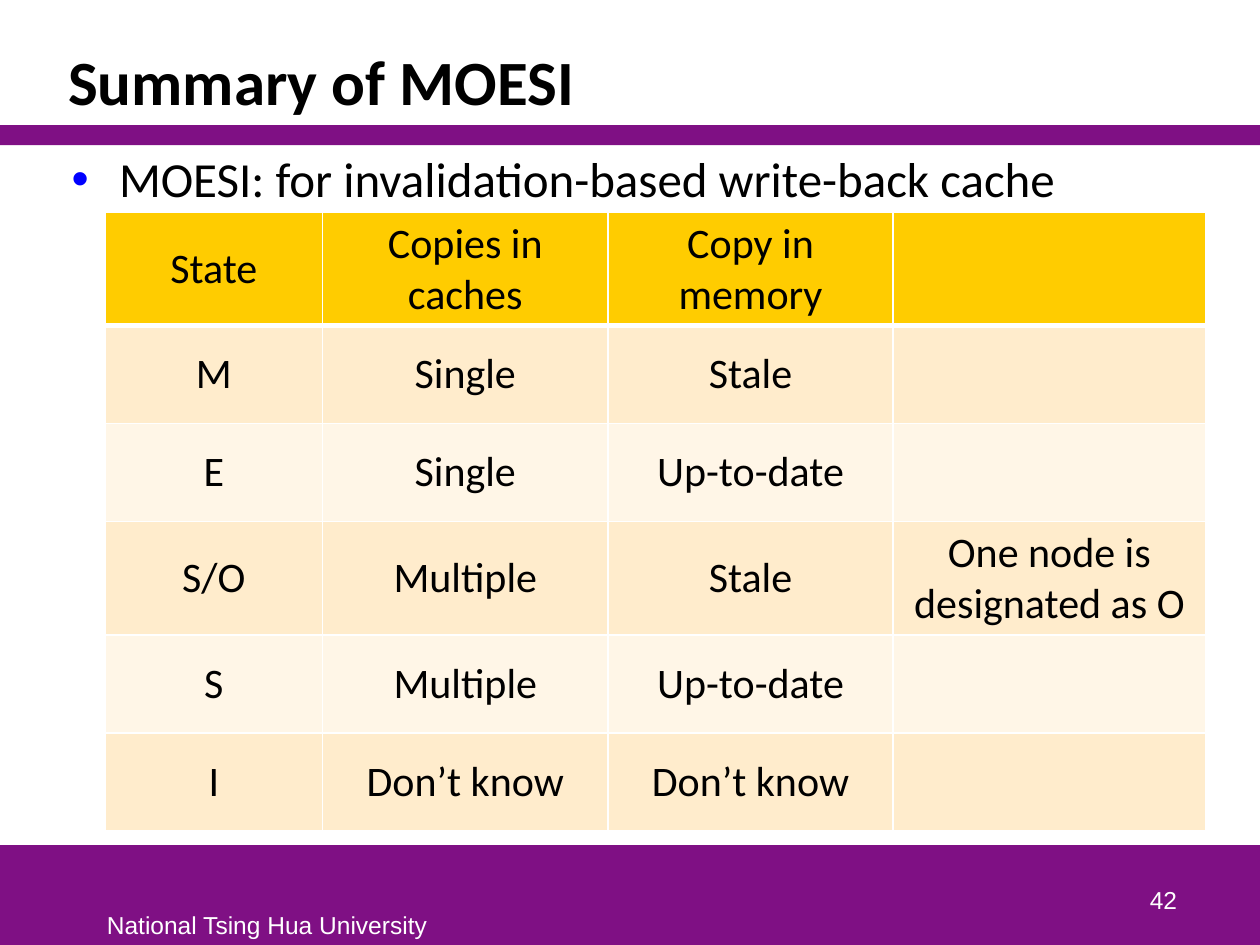
from dataclasses import dataclass

import lxml.etree
import pptx
import pptx.dml.color
import pptx.enum.shapes
import pptx.enum.text
import pptx.oxml
import pptx.oxml.ns
import pptx.util

Pt = pptx.util.Pt
Align = pptx.enum.text.PP_ALIGN
Anchor = pptx.enum.text.MSO_ANCHOR
qn = pptx.oxml.ns.qn


@dataclass(frozen=True)
class Theme:
    """Colours, fonts and type sizes of the slide."""

    purple: str = "7F1084"
    white: str = "FFFFFF"
    black: str = "000000"
    bullet: str = "0000FF"
    header: str = "FFCC00"
    bands: tuple[str, str] = ("FFECCC", "FFF6E7")
    main_font: str = "Calibri"
    footer_font: str = "Arial"
    title_size: float = 36
    body_size: float = 28
    table_size: float = 24
    footer_size: float = 14


@dataclass(frozen=True)
class Box:
    """A rectangle in points."""

    left: float
    top: float
    width: float
    height: float

    def lengths(self) -> tuple:
        """Return the four lengths for python-pptx."""
        return tuple(Pt(value) for value in (self.left, self.top, self.width, self.height))


THEME = Theme()
SLIDE = Box(0, 0, 720, 540)
BARS = (Box(0, 483, 720, 57), Box(0, 71.5, 720, 11.5))
TITLE = Box(31.7, 18, 645.8, 53.3)
BODY = Box(33.8, 81.4, 643.7, 398.2)
UNIVERSITY = Box(54, 516.2, 198.7, 24)
PAGE_NUMBER = Box(529.9, 490.3, 149.8, 36)
TABLE = Box(60, 121.2, 629, 336)
COLUMN_WIDTHS = (124.4, 163, 163, 178.6)
ROWS = (
    ("State", "Copies in caches", "Copy in memory", ""),
    ("M", "Single", "Stale", ""),
    ("E", "Single", "Up-to-date", ""),
    ("S/O", "Multiple", "Stale", "One node is designated as O"),
    ("S", "Multiple", "Up-to-date", ""),
    ("I", "Don’t know", "Don’t know", ""),
)


def rgb(value: str) -> pptx.dml.color.RGBColor:
    """Turn a hexadecimal string into a colour."""
    return pptx.dml.color.RGBColor.from_string(value)


def write(frame, text: str, *, size: float, font: str = THEME.main_font,
          color: str = THEME.black, bold: bool = False, align=Align.LEFT,
          line_spacing: float = 1.0, bullet: str = "", indent: float = 27) -> None:
    """Write one formatted paragraph into a text frame."""
    paragraph = frame.paragraphs[0]
    paragraph.text = text
    paragraph.alignment = align
    paragraph.line_spacing = line_spacing
    paragraph.space_before = Pt(0)
    if bullet:
        properties = paragraph._p.get_or_add_pPr()
        properties.set("marL", str(Pt(indent)))
        properties.set("indent", str(-Pt(indent)))
        bullet_color = lxml.etree.SubElement(properties, qn("a:buClr"))
        lxml.etree.SubElement(bullet_color, qn("a:srgbClr"), val=THEME.bullet)
        lxml.etree.SubElement(properties, qn("a:buFont"), typeface=THEME.footer_font)
        lxml.etree.SubElement(properties, qn("a:buChar"), char=bullet)
    for target in (paragraph, *paragraph.runs):
        target.font.name = font
        target.font.size = Pt(size)
        target.font.bold = bold
        target.font.color.rgb = rgb(color)


def draw_bar(slide, box: Box) -> None:
    """Draw a plain purple bar."""
    bar = slide.shapes.add_shape(pptx.enum.shapes.MSO_SHAPE.RECTANGLE, *box.lengths())
    bar.shadow.inherit = False
    bar.fill.solid()
    bar.fill.fore_color.rgb = rgb(THEME.purple)
    bar.line.fill.background()


def fill_placeholder(shape, box: Box, text: str, anchor, **text_format) -> None:
    """Place a template placeholder and write its text."""
    shape.left, shape.top, shape.width, shape.height = box.lengths()
    shape.text_frame.auto_size = pptx.enum.text.MSO_AUTO_SIZE.NONE
    shape.text_frame.vertical_anchor = anchor
    write(shape.text_frame, text, **text_format)


def draw_footer(slide, box: Box, text: str, *, wrap: bool, anchor, align) -> None:
    """Draw white footer text."""
    frame = slide.shapes.add_textbox(*box.lengths()).text_frame
    frame.word_wrap = wrap
    frame.vertical_anchor = anchor
    write(frame, text, size=THEME.footer_size, font=THEME.footer_font,
          color=THEME.white, align=align)


def draw_border(cell, side: str, width: float) -> None:
    """Add a white border to one side of a cell."""
    line = lxml.etree.SubElement(
        cell._tc.get_or_add_tcPr(), qn(f"a:ln{side}"), w=str(Pt(width)))
    fill = lxml.etree.SubElement(line, qn("a:solidFill"))
    lxml.etree.SubElement(fill, qn("a:srgbClr"), val=THEME.white)


def draw_table(slide, box: Box, rows: tuple) -> None:
    """Draw the banded state table."""
    table = slide.shapes.add_table(len(rows), len(COLUMN_WIDTHS), *box.lengths()).table
    for column, width in zip(table.columns, COLUMN_WIDTHS):
        column.width = Pt(width)
    for row_index, texts in enumerate(rows):
        table.rows[row_index].height = Pt(box.height / len(rows))
        color = THEME.bands[(row_index - 1) % 2] if row_index else THEME.header
        widths = {"L": 1, "R": 1, "T": 3 if row_index == 1 else 1,
                  "B": 3 if row_index == 0 else 1}
        for column_index, text in enumerate(texts):
            cell = table.cell(row_index, column_index)
            for side, width in widths.items():
                draw_border(cell, side, width)
            cell.fill.solid()
            cell.fill.fore_color.rgb = rgb(color)
            cell.vertical_anchor = Anchor.MIDDLE
            write(cell.text_frame, text, size=THEME.table_size, align=Align.CENTER)


def main() -> None:
    """Build and save the slide."""
    presentation = pptx.Presentation()
    presentation.slide_width, presentation.slide_height = Pt(SLIDE.width), Pt(SLIDE.height)
    slide = presentation.slides.add_slide(presentation.slide_layouts[1])
    for bar in BARS:
        draw_bar(slide, bar)
    fill_placeholder(slide.shapes.title, TITLE, "Summary of MOESI", Anchor.BOTTOM,
                     size=THEME.title_size, bold=True, line_spacing=0.85)
    fill_placeholder(slide.placeholders[1], BODY,
                     "MOESI: for invalidation-based write-back cache", Anchor.TOP,
                     size=THEME.body_size, bullet="•")
    draw_footer(slide, UNIVERSITY, "National Tsing Hua University",
                wrap=False, anchor=Anchor.TOP, align=Align.LEFT)
    draw_footer(slide, PAGE_NUMBER, "42",
                wrap=True, anchor=Anchor.BOTTOM, align=Align.RIGHT)
    draw_table(slide, TABLE, ROWS)
    presentation.save("out.pptx")


if __name__ == "__main__":
    main()
